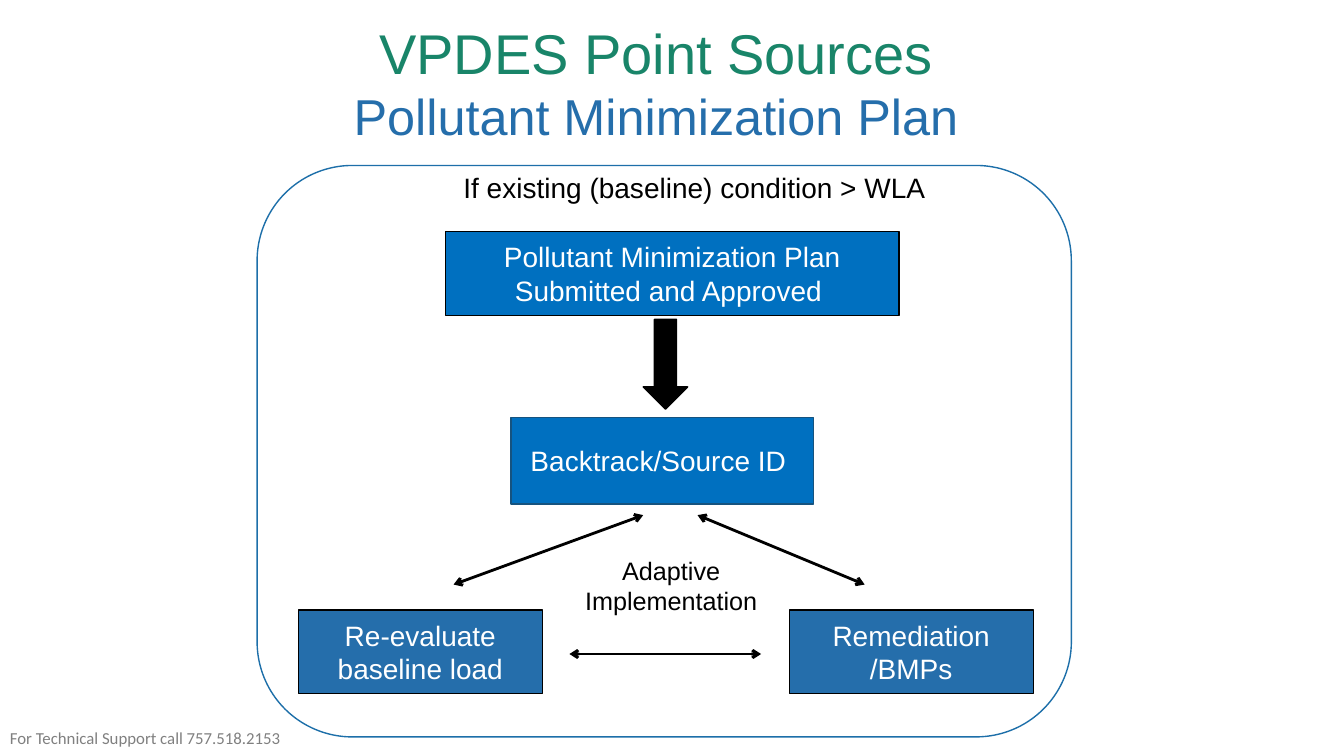
from dataclasses import dataclass

import pptx
import pptx.dml.color
import pptx.enum.shapes
import pptx.enum.text
import pptx.oxml.ns
import pptx.util
from lxml import etree

Cm = pptx.util.Cm
Pt = pptx.util.Pt
RGBColor = pptx.dml.color.RGBColor
MSO_SHAPE = pptx.enum.shapes.MSO_SHAPE
MSO_ANCHOR = pptx.enum.text.MSO_ANCHOR
PP_ALIGN = pptx.enum.text.PP_ALIGN

GREEN = RGBColor(0x19, 0x85, 0x69)
STEEL = RGBColor(0x25, 0x6E, 0xAB)
BLUE = RGBColor(0x00, 0x70, 0xC0)
NAVY = RGBColor(0x16, 0x53, 0x7F)
FRAME = RGBColor(0x1D, 0x6F, 0xA9)
GREY = RGBColor(0x80, 0x80, 0x80)
BLACK = RGBColor(0, 0, 0)
WHITE = RGBColor(255, 255, 255)


@dataclass(frozen=True)
class Line:
    text: str
    size: float = 20
    color: RGBColor = BLACK
    font: str = "Arial"


@dataclass(frozen=True)
class Label:
    left: float
    top: float
    width: float
    height: float
    lines: tuple[Line, ...]
    align: PP_ALIGN = PP_ALIGN.CENTER
    anchor: MSO_ANCHOR = MSO_ANCHOR.TOP


@dataclass(frozen=True)
class Block:
    left: float
    top: float
    width: float
    height: float
    fill: RGBColor | None
    border: RGBColor = BLACK
    lines: tuple[str, ...] = ()
    kind: MSO_SHAPE = MSO_SHAPE.RECTANGLE


@dataclass(frozen=True)
class Arrow:
    x1: float
    y1: float
    x2: float
    y2: float


TITLE = Label(0, 0.23, 33.87, 3.68, (
    Line("VPDES Point Sources", 40, GREEN),
    Line("Pollutant Minimization Plan", 36, STEEL),
), anchor=MSO_ANCHOR.MIDDLE)
CONDITION = Label(11.43, 4.17, 12.27, 1.12,
                  (Line("If existing (baseline) condition > WLA"),), PP_ALIGN.LEFT)
ADAPTIVE = Label(14.35, 13.87, 5.13, 1.8, (Line("Adaptive Implementation", 18),))
SUPPORT = Label(0, 17.83, 11.43, 1.02,
                (Line("For Technical Support call 757.518.2153", 12, GREY, "Calibri"),),
                PP_ALIGN.LEFT, MSO_ANCHOR.BOTTOM)

BLOCKS = (
    Block(6.48, 4.17, 20.52, 14.4, None, FRAME, kind=MSO_SHAPE.ROUNDED_RECTANGLE),
    Block(11.23, 5.84, 11.43, 2.11, BLUE,
          lines=("Pollutant Minimization Plan", "Submitted and Approved ")),
    Block(16.21, 8.05, 1.12, 2.26, BLACK, kind=MSO_SHAPE.DOWN_ARROW),
    Block(12.88, 10.52, 7.62, 2.18, BLUE, NAVY, ("Backtrack/Source ID ",)),
    Block(7.52, 15.37, 6.15, 2.11, STEEL, lines=("Re-evaluate baseline load",)),
    Block(19.89, 15.37, 6.15, 2.11, STEEL, lines=("Remediation", "/BMPs")),
)
ARROWS = (
    Arrow(16.21, 12.98, 11.43, 14.73),
    Arrow(19.18, 16.48, 14.35, 16.48),
    Arrow(17.58, 12.98, 21.79, 14.73),
)


def write_lines(tf: pptx.text.text.TextFrame, lines: tuple[Line, ...],
                align: PP_ALIGN, anchor: MSO_ANCHOR) -> None:
    tf.word_wrap = True
    tf.vertical_anchor = anchor
    for i, line in enumerate(lines):
        p = tf.add_paragraph() if i else tf.paragraphs[0]
        p.alignment = align
        r = p.add_run()
        r.text = line.text
        r.font.size = Pt(line.size)
        r.font.name = line.font
        r.font.color.rgb = line.color


def add_label(s: pptx.slide.Slide, label: Label) -> pptx.text.text.TextFrame:
    sp = s.shapes.add_textbox(Cm(label.left), Cm(label.top),
                              Cm(label.width), Cm(label.height))
    write_lines(sp.text_frame, label.lines, label.align, label.anchor)
    return sp.text_frame


def add_block(s: pptx.slide.Slide, block: Block) -> None:
    sp = s.shapes.add_shape(block.kind, Cm(block.left), Cm(block.top),
                            Cm(block.width), Cm(block.height))
    sp.shadow.inherit = False
    if block.fill is None:
        sp.fill.background()
    else:
        sp.fill.solid()
        sp.fill.fore_color.rgb = block.fill
    sp.line.color.rgb = block.border
    sp.line.width = Pt(1)
    if block.lines:
        lines = tuple(Line(text, color=WHITE) for text in block.lines)
        write_lines(sp.text_frame, lines, PP_ALIGN.CENTER, MSO_ANCHOR.MIDDLE)


def add_arrow(s: pptx.slide.Slide, arrow: Arrow) -> None:
    cxn = s.shapes.add_connector(pptx.enum.shapes.MSO_CONNECTOR.STRAIGHT,
                                 Cm(arrow.x1), Cm(arrow.y1), Cm(arrow.x2), Cm(arrow.y2))
    cxn.line.color.rgb = BLACK
    cxn.line.width = Pt(2)
    qn = pptx.oxml.ns.qn
    ln = cxn.line._get_or_add_ln()
    for end in ("a:headEnd", "a:tailEnd"):
        etree.SubElement(ln, qn(end), type="arrow")
    etree.SubElement(cxn._element.spPr, qn("a:effectLst"))


def main() -> None:
    prs = pptx.Presentation()
    prs.slide_width = Cm(33.87)
    prs.slide_height = Cm(19.05)
    s = prs.slides.add_slide(prs.slide_layouts[6])
    title = add_label(s, TITLE)
    title.paragraphs[0]._p.get_or_add_pPr().set("marR", str(Cm(0.8)))
    for block in BLOCKS:
        add_block(s, block)
    for arrow in ARROWS:
        add_arrow(s, arrow)
    add_label(s, CONDITION)
    add_label(s, ADAPTIVE)
    support = add_label(s, SUPPORT)
    support.margin_bottom = 0
    prs.save("out.pptx")


if __name__ == "__main__":
    main()
